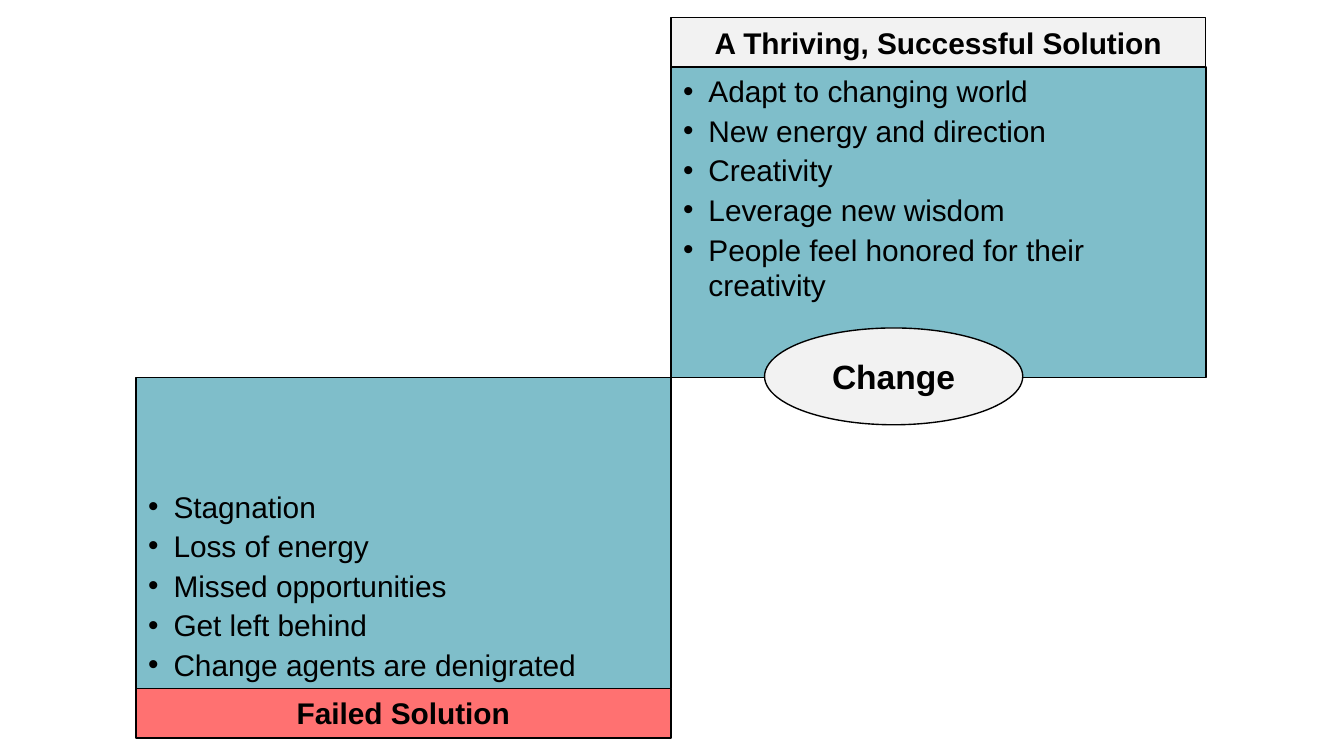
from dataclasses import dataclass

import pptx
import pptx.dml.color
import pptx.enum.shapes
import pptx.enum.text
import pptx.oxml
import pptx.oxml.ns
import pptx.presentation
import pptx.shapes.autoshape
import pptx.slide
import pptx.util
from pptx.util import Cm

Shapes = pptx.enum.shapes.MSO_SHAPE
Anchor = pptx.enum.text.MSO_ANCHOR
Align = pptx.enum.text.PP_ALIGN

COLORS = {
    "teal": "007F97",
    "grey": "F2F2F2",
    "red": "FF7171",
    "black": "000000",
}
FONT = "Arial"

# Layout in cm: two panels meet corner to corner at the middle
PANEL_WIDTH, PANEL_HEIGHT = 10.11, 5.87
HEADING_HEIGHT = 0.94
LEFT, TOP = 2.57, 0.33
MIDDLE_X = LEFT + PANEL_WIDTH
PANEL_TOP = TOP + HEADING_HEIGHT
MIDDLE_Y = PANEL_TOP + PANEL_HEIGHT
BOTTOM = MIDDLE_Y + PANEL_HEIGHT
BULLET_INDENT = Cm(0.48)


@dataclass
class Box:
    kind: Shapes
    left: float
    top: float
    width: float
    height: float
    color: str
    anchor: Anchor
    margin_x: float = 0.23
    margin_y: float = 0.11
    wrap: bool = True


@dataclass
class Panel:
    left: float
    top: float
    anchor: Anchor
    items: list[str]


@dataclass
class Label:
    text: str
    box: Box
    size: int = 16


def heading_box(left: float, top: float, color: str) -> Box:
    return Box(Shapes.RECTANGLE, left, top, PANEL_WIDTH, HEADING_HEIGHT,
               color, Anchor.TOP, 0.25, 0.13)


PANELS = [
    Panel(MIDDLE_X, PANEL_TOP, Anchor.TOP, [
        "Adapt to changing world",
        "New energy and direction",
        "Creativity",
        "Leverage new wisdom",
        "People feel honored for their creativity",
    ]),
    Panel(LEFT, MIDDLE_Y, Anchor.BOTTOM, [
        "Stagnation",
        "Loss of energy",
        "Missed opportunities",
        "Get left behind",
        "Change agents are denigrated",
    ]),
]

LABELS = [
    Label("A Thriving, Successful Solution", heading_box(MIDDLE_X, TOP, "grey")),
    Label("Failed Solution", heading_box(LEFT, BOTTOM, "red")),
    Label("Change", Box(Shapes.OVAL, 14.45, 6.2, 4.88, 1.83, "grey",
                        Anchor.MIDDLE, wrap=False), 18),
]


def add_box(slide: pptx.slide.Slide, box: Box) -> pptx.shapes.autoshape.Shape:
    shape = slide.shapes.add_shape(
        box.kind, Cm(box.left), Cm(box.top), Cm(box.width), Cm(box.height))
    shape.shadow.inherit = False
    shape.fill.solid()
    shape.fill.fore_color.rgb = pptx.dml.color.RGBColor.from_string(COLORS[box.color])
    shape.line.color.rgb = pptx.dml.color.RGBColor.from_string(COLORS["black"])
    shape.line.width = pptx.util.Pt(0.75)
    text_frame = shape.text_frame
    text_frame.word_wrap = box.wrap
    text_frame.vertical_anchor = box.anchor
    text_frame.margin_left = text_frame.margin_right = Cm(box.margin_x)
    text_frame.margin_top = text_frame.margin_bottom = Cm(box.margin_y)
    return shape


def format_text(paragraph, size: int, bold: bool, alignment: Align) -> None:
    paragraph.alignment = alignment
    for run in paragraph.runs:
        run.font.name = FONT
        run.font.size = pptx.util.Pt(size)
        run.font.bold = bold
        run.font.color.rgb = pptx.dml.color.RGBColor.from_string(COLORS["black"])


def set_transparency(shape: pptx.shapes.autoshape.Shape, opacity: int) -> None:
    color = shape.fill._xPr.find(".//" + pptx.oxml.ns.qn("a:srgbClr"))
    alpha = pptx.oxml.parse_xml(
        f'<a:alpha {pptx.oxml.ns.nsdecls("a")} val="{opacity * 1000}"/>')
    color.append(alpha)


def add_bullet(paragraph) -> None:
    properties = paragraph._p.get_or_add_pPr()
    properties.set("marL", str(BULLET_INDENT))
    properties.set("indent", str(-BULLET_INDENT))
    namespace = pptx.oxml.ns.nsdecls("a")
    for element in (f'<a:buFont {namespace} typeface="{FONT}"/>',
                    f'<a:buChar {namespace} char="•"/>'):
        properties.append(pptx.oxml.parse_xml(element))


def add_panel(slide: pptx.slide.Slide, panel: Panel) -> None:
    shape = add_box(slide, Box(
        Shapes.FLOWCHART_PROCESS, panel.left, panel.top,
        PANEL_WIDTH, PANEL_HEIGHT, "teal", panel.anchor))
    set_transparency(shape, 50)
    shape.text_frame.text = "\n".join(panel.items)
    for index, paragraph in enumerate(shape.text_frame.paragraphs):
        add_bullet(paragraph)
        format_text(paragraph, 16, False, Align.LEFT)
        if index:
            paragraph.space_before = pptx.util.Pt(2)


def add_label(slide: pptx.slide.Slide, label: Label) -> None:
    shape = add_box(slide, label.box)
    shape.text_frame.text = label.text
    format_text(shape.text_frame.paragraphs[0], label.size, True, Align.CENTER)


def main() -> None:
    presentation = pptx.Presentation()
    presentation.slide_width = Cm(25.4)
    presentation.slide_height = Cm(14.29)
    # The slide has no title, so the blank layout is used
    slide = presentation.slides.add_slide(presentation.slide_layouts[6])

    # Bulleted panels
    for panel in PANELS:
        add_panel(slide, panel)

    # Headings and the central ellipse
    for label in LABELS:
        add_label(slide, label)

    presentation.save("out.pptx")


if __name__ == "__main__":
    main()
